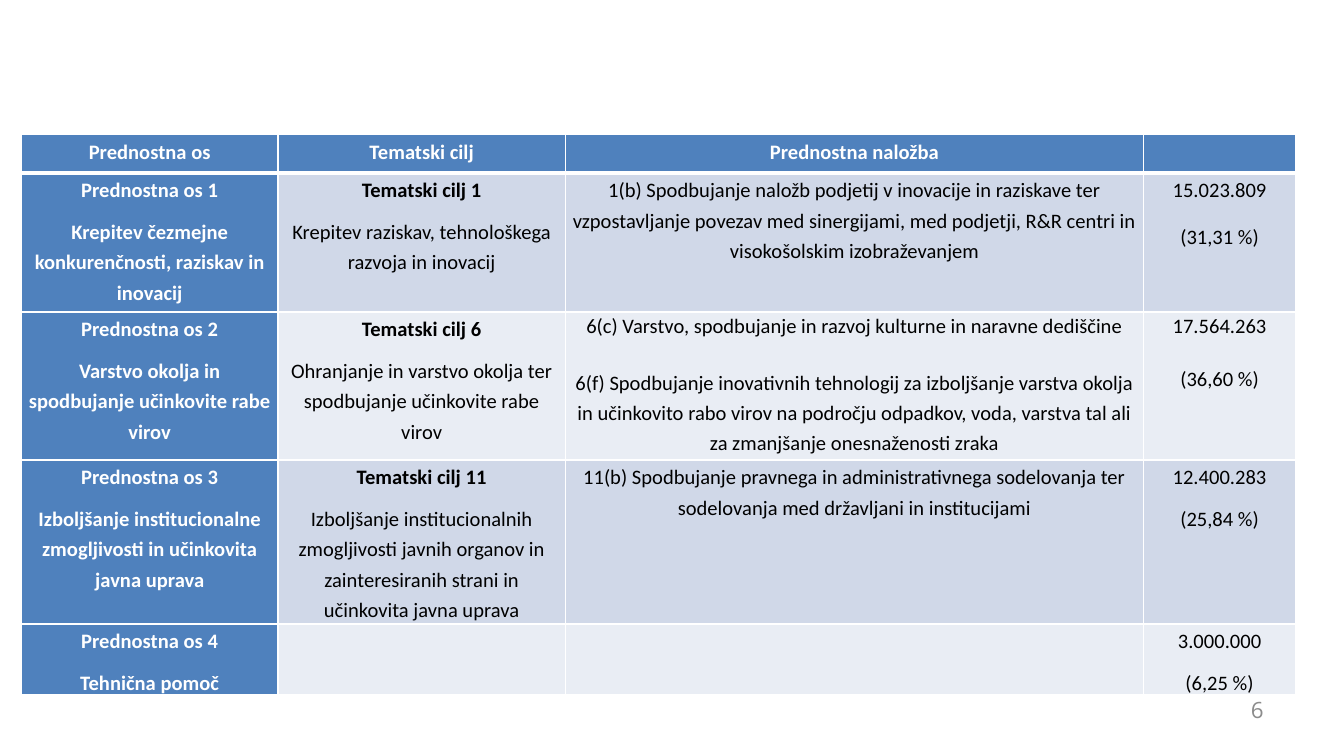
import pptx
import pptx.util
import pptx.dml.color
import pptx.enum.text
import pptx.oxml
import pptx.oxml.ns
from pptx.util import Cm, Pt

COLOURS = {"blue": "4F81BD", "dark_band": "D0D8E8", "light_band": "E9EDF4",
           "white": "FFFFFF", "black": "000000", "grey": "8C8C8C"}
ALIGN = pptx.enum.text.PP_ALIGN


def rgb(name):
    return pptx.dml.color.RGBColor.from_string(COLOURS[name])


def add_borders(cell, widths):
    """Draw white cell edges; widths are in points, by edge letter."""
    properties = cell._tc.get_or_add_tcPr()
    for index, edge in enumerate("LRTB"):
        properties.insert(index, pptx.oxml.parse_xml(
            f'<a:ln{edge} {pptx.oxml.ns.nsdecls("a")} w="{Pt(widths[edge])}">'
            f'<a:solidFill><a:srgbClr val="{COLOURS["white"]}"/></a:solidFill></a:ln{edge}>'))


deck = pptx.Presentation()
deck.slide_width, deck.slide_height = Cm(25.4), Cm(14.29)
page = deck.slides.add_slide(deck.slide_layouts[6])

# Slide number
box = page.shapes.add_textbox(Cm(18.21), Cm(13.03), Cm(5.92), Cm(0.76))
box.text_frame.word_wrap = True
box.text_frame.vertical_anchor = pptx.enum.text.MSO_ANCHOR.MIDDLE
para = box.text_frame.paragraphs[0]
para.text = "6"
para.alignment = ALIGN.RIGHT
para.font.name, para.font.size = "Open Sans", Pt(12)
para.font.color.rgb = rgb("grey")

# Table content: each cell is a list of paragraphs
rows = [
    [["Prednostna os"], ["Tematski cilj"], ["Prednostna naložba"], [""]],
    [["Prednostna os 1", "Krepitev čezmejne konkurenčnosti, raziskav in inovacij"],
     ["Tematski cilj 1", "Krepitev raziskav, tehnološkega razvoja in inovacij"],
     ["1(b) Spodbujanje naložb podjetij v inovacije in raziskave ter vzpostavljanje povezav "
      "med sinergijami, med podjetji, R&R centri in visokošolskim izobraževanjem"],
     ["15.023.809", "(31,31 %)"]],
    [["Prednostna os 2", "Varstvo okolja in spodbujanje učinkovite rabe virov"],
     ["Tematski cilj 6", "Ohranjanje in varstvo okolja ter spodbujanje učinkovite rabe virov"],
     ["6(c) Varstvo, spodbujanje in razvoj kulturne in naravne dediščine",
      "6(f) Spodbujanje inovativnih tehnologij za izboljšanje varstva okolja in učinkovito "
      "rabo virov na področju odpadkov, voda, varstva tal ali za zmanjšanje onesnaženosti zraka"],
     ["17.564.263", "(36,60 %)"]],
    [["Prednostna os 3", "Izboljšanje institucionalne zmogljivosti in učinkovita javna uprava"],
     ["Tematski cilj 11", "Izboljšanje institucionalnih zmogljivosti javnih organov in "
      "zainteresiranih strani in učinkovita javna uprava"],
     ["11(b) Spodbujanje pravnega in administrativnega sodelovanja ter sodelovanja med "
      "državljani in institucijami"],
     ["12.400.283", "(25,84 %)"]],
    [["Prednostna os 4", "Tehnična pomoč"], [""], [""], ["3.000.000", "(6,25 %)"]],
]
column_widths = [4.84, 5.44, 10.92, 2.88]
row_heights = [0.73, 2.63, 2.8, 3.1, 1.34]
first_gaps = {1: 3, 2: 8}  # points after the first paragraph, right-hand columns

# Table grid
table = page.shapes.add_table(len(rows), len(column_widths), Cm(0.41), Cm(2.54),
                              Cm(sum(column_widths)), Cm(sum(row_heights))).table
for column, width in zip(table.columns, column_widths):
    column.width = Cm(width)
for row, height in zip(table.rows, row_heights):
    row.height = Cm(height)

# Cells
for r, row in enumerate(rows):
    for c, texts in enumerate(row):
        cell = table.cell(r, c)
        heading = r == 0 or c == 0
        cell.margin_left = cell.margin_right = Cm(0.13)
        cell.margin_top = cell.margin_bottom = 0
        cell.fill.solid()
        cell.fill.fore_color.rgb = rgb("blue" if heading else "dark_band" if r % 2 else "light_band")
        add_borders(cell, {"L": 1, "R": 1, "T": 3 if r == 1 else 1, "B": 3 if r == 0 else 1})
        for p, text in enumerate(texts):
            para = cell.text_frame.paragraphs[0] if p == 0 else cell.text_frame.add_paragraph()
            para.text = text
            para.alignment = ALIGN.CENTER
            tighter = r == 2 and (c == 3 or (c == 2 and p == 0))
            para.line_spacing = 1.07 if tighter else 1.2
            if p > 0:
                para.space_before = Pt(6)
            elif c >= 2 and r in first_gaps:
                para.space_after = Pt(first_gaps[r])
            para.font.name, para.font.size = "Calibri", Pt(11)
            para.font.bold = heading or (c == 1 and p == 0)
            para.font.color.rgb = rgb("white" if heading else "black")

deck.save("out.pptx")
